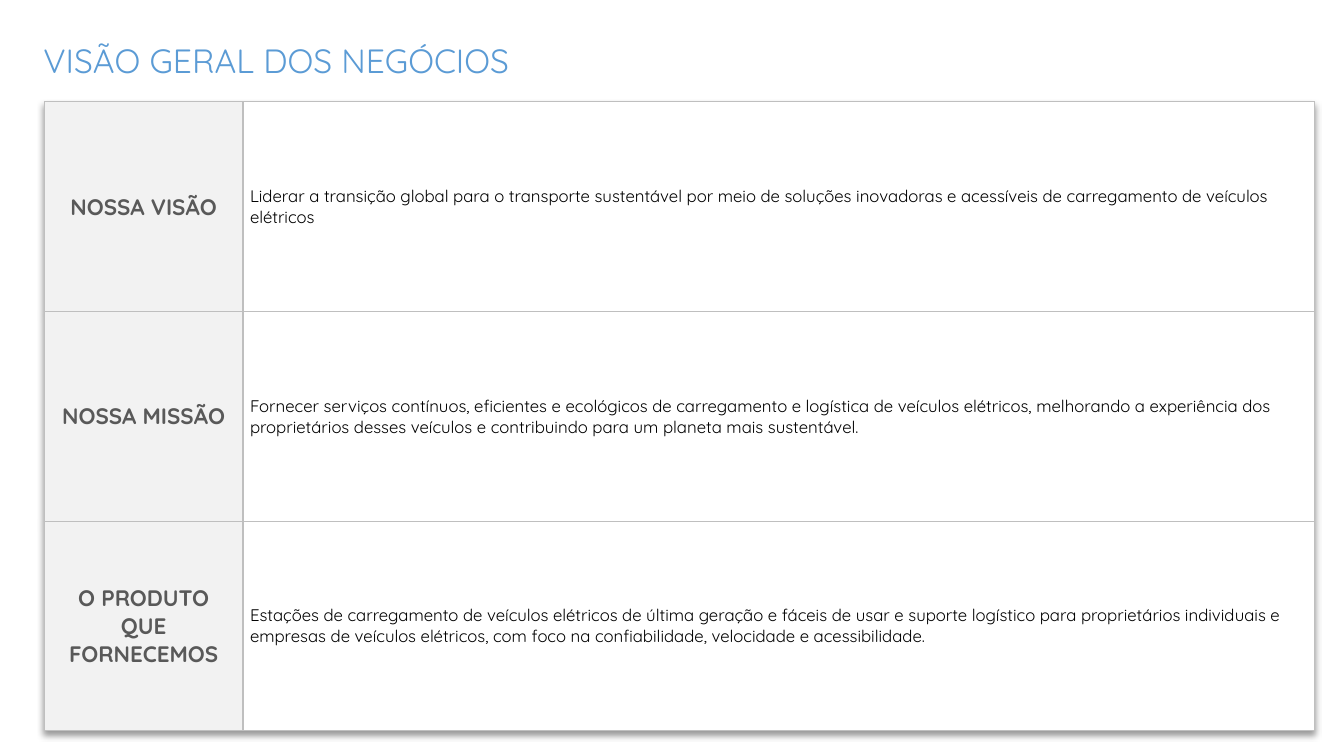
from dataclasses import dataclass
from typing import Any

import pptx
import pptx.dml.color
import pptx.enum.text
import pptx.oxml
import pptx.oxml.ns
import pptx.util

PX = 9144  # 100 px to the inch
FONT = "Quicksand"
COLORS = {
    "title": "5B9BD5",
    "label": "595959",
    "label_fill": "F2F2F2",
    "text": "000000",
    "text_fill": "FFFFFF",
    "border": "BFBFBF",
}
TITLE_BOX = {"left": 33, "top": 35, "width": 808, "height": 50}
TABLE_BOX = {"left": 44, "top": 101, "width": 1260, "height": 624}
COLUMN_WIDTHS = (197, 1063)
SIDES = ("lnL", "lnR", "lnT", "lnB")
ALIGN = pptx.enum.text.PP_ALIGN
ANCHOR = pptx.enum.text.MSO_ANCHOR


@dataclass(frozen=True)
class Statement:
    label: str
    text: str


@dataclass(frozen=True)
class TextStyle:
    size: int
    color: str
    bold: bool
    align: ALIGN


@dataclass(frozen=True)
class CellStyle:
    text: TextStyle
    fill: str
    margins: dict[str, int]


TITLE_STYLE = TextStyle(24, "title", False, ALIGN.LEFT)
LABEL_CELL = CellStyle(
    TextStyle(16, "label", True, ALIGN.CENTER),
    "label_fill",
    {"margin_left": 10, "margin_right": 10, "margin_top": 5, "margin_bottom": 5},
)
TEXT_CELL = CellStyle(
    TextStyle(12, "text", False, ALIGN.LEFT),
    "text_fill",
    {"margin_left": 7, "margin_right": 7, "margin_top": 0, "margin_bottom": 0},
)

STATEMENTS = (
    Statement(
        "NOSSA VISÃO",
        "Liderar a transição global para o transporte sustentável por meio de "
        "soluções inovadoras e acessíveis de carregamento de veículos elétricos",
    ),
    Statement(
        "NOSSA MISSÃO",
        "Fornecer serviços contínuos, eficientes e ecológicos de carregamento e "
        "logística de veículos elétricos, melhorando a experiência dos proprietários "
        "desses veículos e contribuindo para um planeta mais sustentável.",
    ),
    Statement(
        "O PRODUTO QUE FORNECEMOS",
        "Estações de carregamento de veículos elétricos de última geração e fáceis de "
        "usar e suporte logístico para proprietários individuais e empresas de veículos "
        "elétricos, com foco na confiabilidade, velocidade e acessibilidade.",
    ),
)


def px(length: int) -> pptx.util.Emu:
    return pptx.util.Emu(length * PX)


def rgb(name: str) -> pptx.dml.color.RGBColor:
    return pptx.dml.color.RGBColor.from_string(COLORS[name])


def set_all(target: Any, values: dict[str, Any]) -> None:
    for name, value in values.items():
        setattr(target, name, value)


def scaled(lengths: dict[str, int]) -> dict[str, pptx.util.Emu]:
    return {name: px(length) for name, length in lengths.items()}


def xml(markup: str) -> Any:
    return pptx.oxml.parse_xml(markup.replace(">", f" {pptx.oxml.ns.nsdecls('a')}>", 1))


def write(frame: Any, text: str, style: TextStyle) -> None:
    para = frame.paragraphs[0]
    para.alignment = style.align
    span = para.add_run()
    span.text = text
    set_all(
        span.font,
        {"name": FONT, "size": pptx.util.Pt(style.size), "bold": style.bold},
    )
    span.font.color.rgb = rgb(style.color)


def add_borders(cell: Any) -> None:
    properties = cell._tc.get_or_add_tcPr()
    for index, side in enumerate(SIDES):
        line = xml(
            f'<a:{side} w="{pptx.util.Pt(1)}"><a:solidFill>'
            f'<a:srgbClr val="{COLORS["border"]}"/></a:solidFill></a:{side}>'
        )
        properties.insert(index, line)


def fill_cell(cell: Any, text: str, style: CellStyle) -> None:
    set_all(cell, scaled(style.margins) | {"vertical_anchor": ANCHOR.MIDDLE})
    cell.fill.solid()
    cell.fill.fore_color.rgb = rgb(style.fill)
    write(cell.text_frame, text, style.text)
    add_borders(cell)


def add_shadow(table: Any) -> None:
    shadow = xml(
        '<a:effectLst><a:outerShdw blurRad="50800" dist="38100" dir="5400000" '
        'algn="t" rotWithShape="0"><a:srgbClr val="000000"><a:alpha val="40000"/>'
        "</a:srgbClr></a:outerShdw></a:effectLst>"
    )
    table._tbl.tblPr.insert(0, shadow)


def add_title(page: Any) -> None:
    box = page.shapes.title
    set_all(box, scaled(TITLE_BOX))
    set_all(
        box.text_frame,
        {
            "word_wrap": True,
            "auto_size": pptx.enum.text.MSO_AUTO_SIZE.SHAPE_TO_FIT_TEXT,
            "vertical_anchor": ANCHOR.MIDDLE,
        },
    )
    write(box.text_frame, "VISÃO GERAL DOS NEGÓCIOS", TITLE_STYLE)


def add_statements(page: Any) -> None:
    table = page.shapes.add_table(
        len(STATEMENTS), len(COLUMN_WIDTHS), **scaled(TABLE_BOX)
    ).table
    set_all(table, {"first_row": False, "horz_banding": False})
    add_shadow(table)
    for column, width in zip(table.columns, COLUMN_WIDTHS):
        column.width = px(width)
    for row, statement in zip(table.rows, STATEMENTS):
        fill_cell(row.cells[0], statement.label, LABEL_CELL)
        fill_cell(row.cells[1], statement.text, TEXT_CELL)


def main() -> None:
    deck = pptx.Presentation()
    set_all(deck, scaled({"slide_width": 1333, "slide_height": 750}))
    page = deck.slides.add_slide(deck.slide_layouts.get_by_name("Title Only"))
    add_title(page)
    add_statements(page)
    deck.save("out.pptx")


if __name__ == "__main__":
    main()
